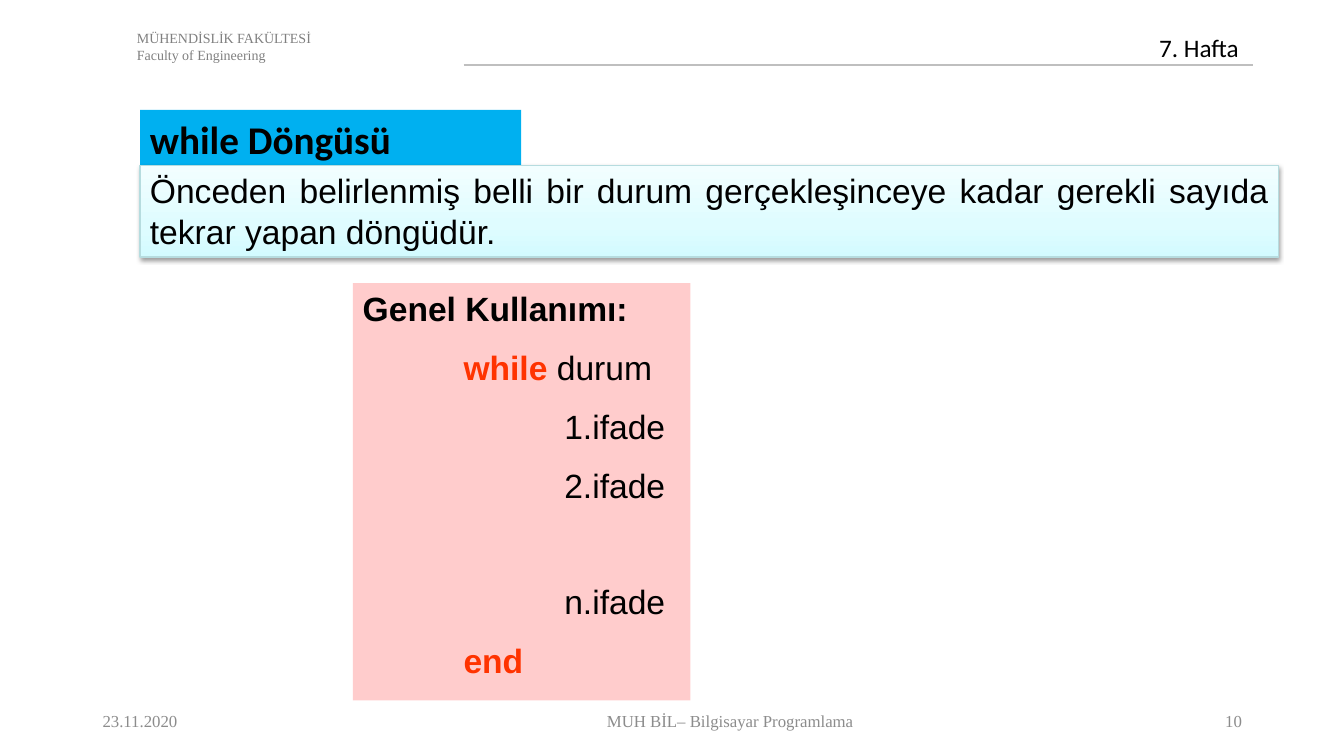
"""Build the lecture slide that introduces the while loop."""
from lxml import etree
from pptx import Presentation
from pptx.dml.color import RGBColor
from pptx.enum.shapes import MSO_CONNECTOR, MSO_SHAPE
from pptx.enum.text import MSO_ANCHOR, PP_ALIGN
from pptx.oxml import parse_xml
from pptx.oxml.ns import qn
from pptx.util import Pt

LEFT, CENTER, RIGHT, JUSTIFY = PP_ALIGN.LEFT, PP_ALIGN.CENTER, PP_ALIGN.RIGHT, PP_ALIGN.JUSTIFY
TOP, MIDDLE = MSO_ANCHOR.TOP, MSO_ANCHOR.MIDDLE
RECTANGLE, STRAIGHT = MSO_SHAPE.RECTANGLE, MSO_CONNECTOR.STRAIGHT

BLACK = RGBColor(0x00, 0x00, 0x00)
HEADER_GRAY = RGBColor(0x80, 0x80, 0x80)
FOOTER_GRAY = RGBColor(0x8C, 0x8C, 0x8C)
RULE_GRAY = RGBColor(0xBF, 0xBF, 0xBF)
TITLE_BLUE = RGBColor(0x00, 0xB0, 0xF0)
CODE_PINK = RGBColor(0xFF, 0xCC, 0xCC)
KEYWORD_RED = RGBColor(0xFF, 0x33, 0x00)
EDGE_TEAL = RGBColor(0xB6, 0xDC, 0xDF)
ICE_STOPS = (
    (0, RGBColor(0xD3, 0xFB, 0xFF)),
    (35, RGBColor(0xDF, 0xFC, 0xFF)),
    (100, RGBColor(0xF2, 0xFE, 0xFF)),
)

SERIF, SANS, BODY = "Times New Roman", "Calibri", "Arial"
DRAWING = 'xmlns:a="http://schemas.openxmlformats.org/drawingml/2006/main"'


def write(paragraph, text, *, size, font, color=BLACK, bold=False,
          align=LEFT, indent=0, before=0):
    """Append one formatted run and set the format of its paragraph."""
    run = paragraph.add_run()
    run.text = text
    run.font.size = Pt(size)
    run.font.name = font
    run.font.bold = bold
    run.font.color.rgb = color
    paragraph.alignment = align
    paragraph.space_before = Pt(before)
    if indent:
        properties = paragraph._p.get_or_add_pPr()
        properties.set("marL", str(Pt(indent)))
        properties.set("indent", "0")


class SlideBuilder:
    """Hold the style and the slide, with one method per kind of element."""

    def __init__(self, slide):
        """Keep the slide that receives the elements."""
        self.shapes = slide.shapes

    def rule(self, left, right, y, color, width):
        """Draw a horizontal line."""
        line = self.shapes.add_connector(STRAIGHT, Pt(left), Pt(y), Pt(right), Pt(y))
        line.line.color.rgb = color
        line.line.width = Pt(width)
        etree.SubElement(line._element.spPr, qn("a:effectLst"))

    def label(self, box, *lines, anchor=TOP, **style):
        """Add a text box with one paragraph per line."""
        frame = self.shapes.add_textbox(*map(Pt, box)).text_frame
        frame.word_wrap = True
        frame.vertical_anchor = anchor
        for number, line in enumerate(lines):
            paragraph = frame.add_paragraph() if number else frame.paragraphs[0]
            write(paragraph, line, **style)

    def panel(self, box, fill=None):
        """Add a borderless rectangle and return it."""
        panel = self.shapes.add_shape(RECTANGLE, *map(Pt, box))
        panel.shadow.inherit = False
        panel.line.fill.background()
        if fill is not None:
            panel.fill.solid()
            panel.fill.fore_color.rgb = fill
        panel.text_frame.word_wrap = True
        panel.text_frame.vertical_anchor = TOP
        return panel

    def raised_panel(self, box, stops, edge):
        """Add a rectangle with a vertical gradient, an edge and a shadow."""
        panel = self.panel(box)
        panel.line.color.rgb = edge
        panel.line.width = Pt(0.75)
        panel.fill.gradient()
        panel.fill.gradient_angle = 90
        properties = panel._element.spPr
        stop_list = properties.find(qn("a:gradFill")).find(qn("a:gsLst"))
        stop_list[:] = [
            parse_xml(f'<a:gs {DRAWING} pos="{place * 1000}"><a:srgbClr val="{color}"/></a:gs>')
            for place, color in stops
        ]
        properties.find(qn("a:effectLst")).append(parse_xml(
            f'<a:outerShdw {DRAWING} blurRad="{Pt(3.1)}" dist="{Pt(1.6)}" dir="5400000" '
            'rotWithShape="0"><a:srgbClr val="000000"><a:alpha val="38000"/></a:srgbClr>'
            '</a:outerShdw>'))
        return panel

    def code(self, box, heading, lines, fill):
        """Add a panel with a heading and indented lines of (gap, indent, runs)."""
        frame = self.panel(box, fill).text_frame
        write(frame.paragraphs[0], heading, size=24, font=BODY, bold=True)
        for gap, indent, runs in lines:
            paragraph = frame.add_paragraph()
            for text, is_keyword in runs:
                write(paragraph, text, size=24, font=BODY, bold=is_keyword,
                      color=KEYWORD_RED if is_keyword else BLACK,
                      indent=indent, before=gap)


def main():
    """Build and save the slide."""
    deck = Presentation()
    deck.slide_width, deck.slide_height = Pt(960), Pt(540)
    page = SlideBuilder(deck.slides.add_slide(deck.slide_layouts[6]))

    page.rule(331.2, 895, 46.4, RULE_GRAY, 1.5)
    page.label((90.7, 17.3, 480, 32), "MÜHENDİSLİK FAKÜLTESİ", "Faculty of Engineering",
               size=10, font=SERIF, color=HEADER_GRAY)
    page.label((820.8, 19.4, 74, 29), "7. Hafta", size=18, font=SANS)

    footer = (
        (66.2, 113, "23.11.2020", LEFT),
        (196.6, 650, "MUH BİL– Bilgisayar Programlama", CENTER),
        (861.8, 32.4, "10", RIGHT),
    )
    for left, width, text, align in footer:
        page.label((left, 500.4, width, 28.8), text, anchor=MIDDLE,
                   size=12, font=SERIF, color=FOOTER_GRAY, align=align)

    title = page.panel((100, 78.5, 272.2, 41), TITLE_BLUE)
    write(title.text_frame.paragraphs[0], "while Döngüsü", size=28, font=SANS, bold=True)

    definition = page.raised_panel((100, 118.1, 813, 65.5), ICE_STOPS, EDGE_TEAL)
    write(definition.text_frame.paragraphs[0],
          "Önceden belirlenmiş belli bir durum gerçekleşinceye kadar gerekli sayıda "
          "tekrar yapan döngüdür.", size=24, font=BODY, align=JUSTIFY)

    gap, skipped_line, step = 13.3, 40.9, 72
    page.code((252, 202.3, 241.2, 298), "Genel Kullanımı:", (
        (gap, step, (("while", True), (" durum", False))),
        (gap, 2 * step, (("1.ifade", False),)),
        (gap, 2 * step, (("2.ifade", False),)),
        (gap + skipped_line, 2 * step, (("n.ifade", False),)),
        (gap, step, (("end", True),)),
    ), CODE_PINK)

    deck.save("out.pptx")


if __name__ == "__main__":
    main()
